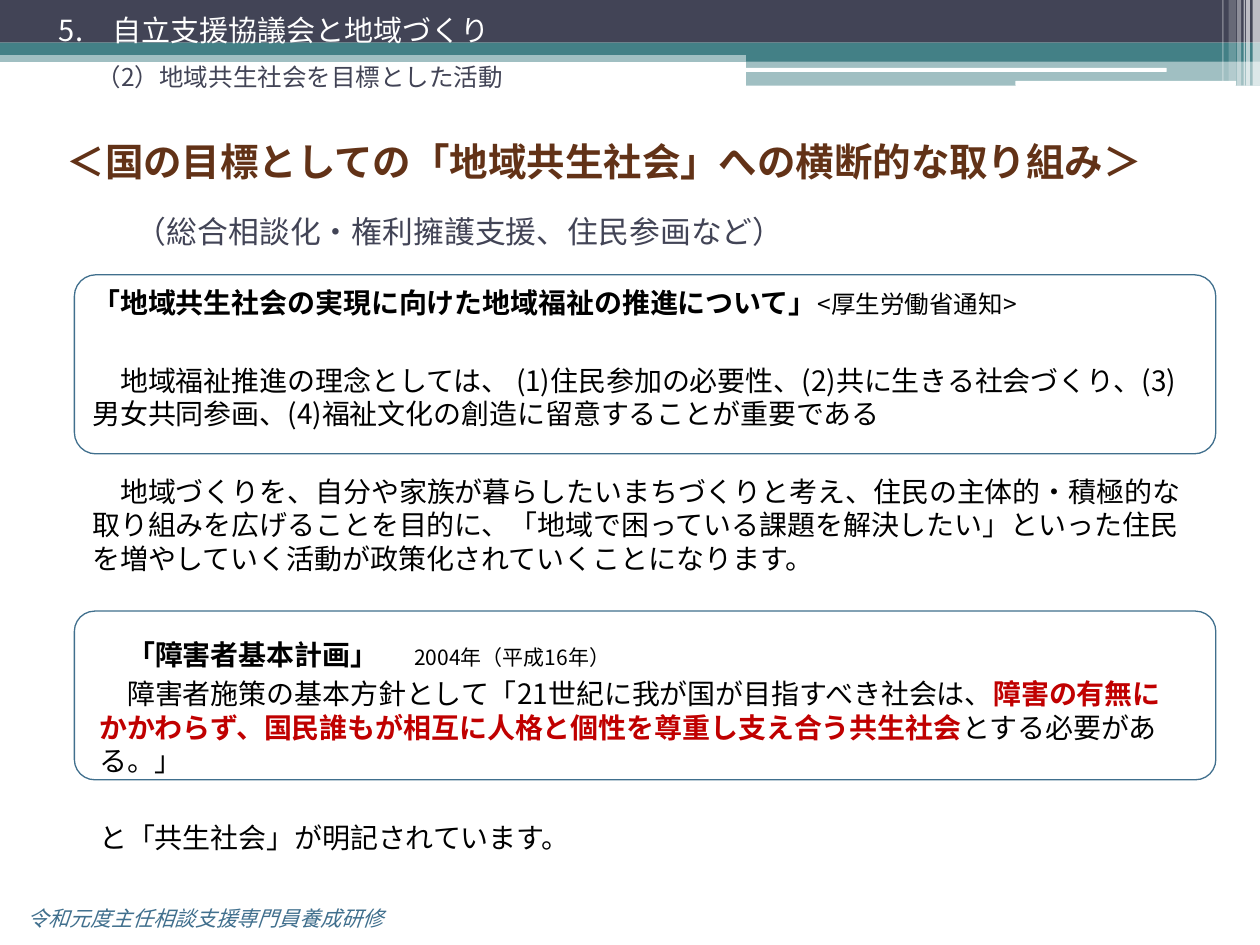
from lxml.etree import SubElement
from pptx import Presentation
from pptx.dml.color import RGBColor
from pptx.enum.shapes import MSO_SHAPE as Kind
from pptx.enum.text import MSO_ANCHOR as Anchor, MSO_AUTO_SIZE as Auto, PP_ALIGN as Align
from pptx.oxml.ns import qn
from pptx.util import Cm, Pt

INK = {
    "navy": "424456", "teal": "438086", "white": "FFFFFF", "black": "000000",
    "blue": "406F8D", "brown": "623217", "red": "C00000",
}
SANS = "Noto Sans CJK JP"


class Deck:
    """Holds the style and the current slide, and draws each kind of element."""

    def __init__(self):
        self.prs = Presentation()
        self.prs.slide_width, self.prs.slide_height = Cm(25.4), Cm(19.05)
        self.slide = self.prs.slides.add_slide(self.prs.slide_layouts[5])

    def tint(self, name):
        return RGBColor.from_string(INK[name])

    def shape(self, kind, box):
        item = self.slide.shapes.add_shape(kind, *map(Cm, box))
        item.shadow.inherit = False
        return item

    def bar(self, box, ink, alpha=100, kind=Kind.RECTANGLE):
        item = self.shape(kind, box)
        item.fill.solid()
        item.fill.fore_color.rgb = self.tint(ink)
        item.line.fill.background()
        if alpha < 100:
            color = item.fill._xPr.find(qn("a:solidFill"))[0]
            SubElement(color, qn("a:alpha"), val=str(alpha * 1000))

    def frame(self, box):
        item = self.shape(Kind.ROUNDED_RECTANGLE, box)
        item.adjustments[0] = 0.12
        item.fill.background()
        item.line.color.rgb = self.tint("blue")
        item.line.width = Pt(0.75)

    def style(self, run, size=16, ink="black", bold=False, slant=False, face=SANS):
        font = run.font
        font.size, font.bold, font.italic, font.name = Pt(size), bold, slant, face
        font.color.rgb = self.tint(ink)
        if face == SANS:
            SubElement(font._element, qn("a:ea"), typeface=face)

    def para(self, para, parts, gap=0, dent=0, tab=None):
        para.alignment, para.space_before = Align.LEFT, Pt(gap)
        props = para._p.get_or_add_pPr()
        props.set("indent", str(Pt(dent)))
        if tab:
            stops = SubElement(props, qn("a:tabLst"))
            SubElement(stops, qn("a:tab"), pos=str(Cm(tab)), algn="l")
        for words, look in parts:
            run = para.add_run()
            run.text = words
            self.style(run, **look)

    def fill(self, item, paras, anchor=Anchor.TOP):
        frame = item.text_frame
        frame.word_wrap, frame.auto_size = True, Auto.NONE
        frame.vertical_anchor = anchor
        for n, (parts, form) in enumerate(paras):
            self.para(frame.add_paragraph() if n else frame.paragraphs[0], parts, **form)

    def text(self, box, paras, anchor=Anchor.TOP):
        self.fill(self.slide.shapes.add_textbox(*map(Cm, box)), paras, anchor)

    def line(self, box, words, anchor=Anchor.TOP, **look):
        self.text(box, [([(words, look)], {})], anchor)

    def title(self, box, words, **look):
        item = self.slide.shapes.title
        item.left, item.top, item.width, item.height = map(Cm, box)
        self.fill(item, [([(words, look)], {})], Anchor.MIDDLE)


def main():
    deck = Deck()
    for box, ink, alpha in [
        ((0, 1.02, 25.4, 0.23), "teal", 50),
        ((0, 0, 25.4, 0.86), "navy", 100),
        ((0, 0.86, 25.4, 0.25), "teal", 100),
        ((15.04, 0.99, 10.36, 0.25), "teal", 100),
        ((15.04, 1.22, 10.36, 0.51), "teal", 50),
    ]:
        deck.bar(box, ink, alpha)
    for box in [(15.01, 1.37, 8.51, 0.08), (20.47, 1.63, 4.45, 0.1)]:
        deck.bar(box, "white", kind=Kind.ROUNDED_RECTANGLE)
    for left, wide, high, alpha in [
        (25.25, 0.15, 1.73, 65), (25.12, 0.08, 1.73, 65), (25.07, 0.03, 1.73, 60),
        (24.94, 0.08, 1.73, 40), (24.77, 0.15, 1.63, 20), (24.64, 0.03, 1.63, 30),
    ]:
        deck.bar((left, 0, wide, high), "white", alpha)

    for top, high in [(5.54, 3.61), (12.32, 3.4)]:
        deck.frame((1.5, top, 23.01, high))

    deck.line((0.94, 0.13, 15.37, 0.89), "5.　自立支援協議会と地域づくり", size=16.6, ink="white")
    deck.line((1.7, 1.12, 22.25, 1.19), "（2）地域共生社会を目標とした活動", size=14, ink="navy")
    deck.title((1.09, 2.34, 22.86, 1.8),
               "＜国の目標としての「地域共生社会」への横断的な取り組み＞",
               size=22, ink="brown", bold=True)
    deck.line((2.49, 4.11, 16.21, 1.12), "（総合相談化・権利擁護支援、住民参画など）",
              Anchor.MIDDLE, size=17.6, ink="navy", face="Arial")

    deck.text((1.61, 5.64, 22.89, 7.8), [
        ([("「地域共生社会の実現に向けた地域福祉の推進について」", {"bold": True}),
          ("<厚生労働省通知>", {"size": 14})], {"gap": 3}),
        ([("地域福祉推進の理念としては、 (1)住民参加の必要性、(2)共に生きる社会づくり、"
           "(3)男女共同参画、(4)福祉文化の創造に留意することが重要である", {})],
         {"gap": 25, "dent": 16}),
        ([("地域づくりを、自分や家族が暮らしたいまちづくりと考え、住民の主体的・積極的な"
           "取り組みを広げることを目的に、「地域で困っている課題を解決したい」といった住民"
           "を増やしていく活動が政策化されていくことになります。", {})],
         {"gap": 25, "dent": 16}),
    ])
    deck.text((1.75, 12.73, 22.25, 4.39), [
        ([("「障害者基本計画」", {"bold": True}), ("\t2004年（平成16年）", {"size": 12})],
         {"gap": 3, "dent": 16, "tab": 7.42}),
        ([("障害者施策の基本方針として「21世紀に我が国が目指すべき社会は、", {}),
          ("障害の有無にかかわらず、国民誰もが相互に人格と個性を尊重し支え合う共生社会",
           {"ink": "red", "bold": True}),
          ("とする必要がある。」", {})], {"gap": 3, "dent": 16}),
        ([("と「共生社会」が明記されています。", {})], {"gap": 25}),
    ])
    deck.line((0.3, 18.14, 10.01, 0.76), "令和元度主任相談支援専門員養成研修",
              size=12, ink="blue", slant=True)
    deck.prs.save("out.pptx")


if __name__ == "__main__":
    main()
